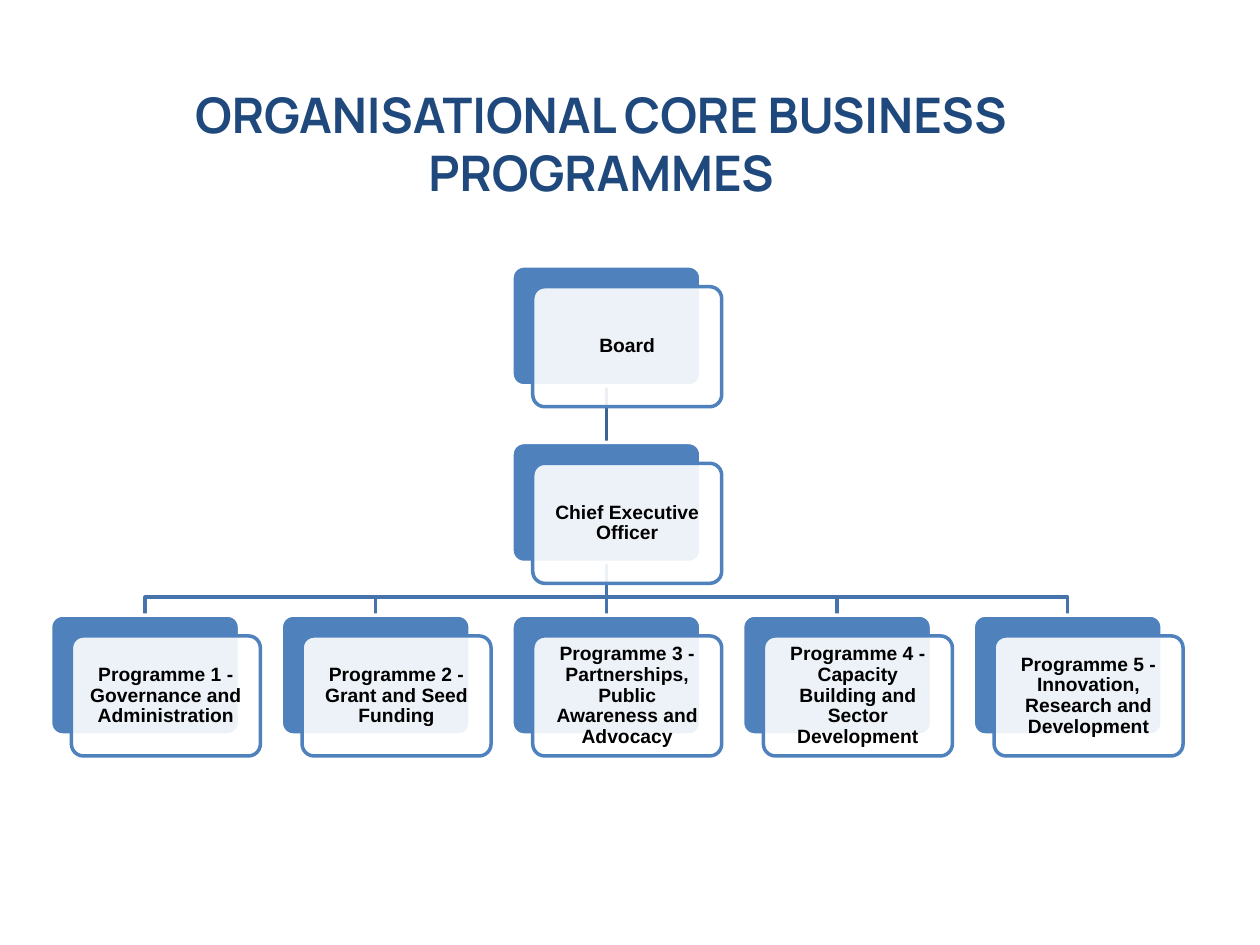
"""Build a slide with an organisation chart of core business programmes."""
from dataclasses import dataclass

from lxml import etree
from pptx import Presentation, util as u
from pptx.dml.color import RGBColor
from pptx.enum import shapes as es, text as et
from pptx.oxml import ns

BLUE, WHITE, BLACK, NAVY = "4F81BD", "FFFFFF", "000000", "1F497D"
WIDE, HIGH, SHIFT = 3.81, 2.42, 0.42
LEFT, STEP, BEND = 1.02, 4.65, 12.04
MID = LEFT + 2 * STEP


@dataclass
class Card:
    """Hold the place and label of one card, in centimetres."""
    label: str
    left: float
    top: float

    @property
    def mid(self) -> float:
        """Return the horizontal centre."""
        return self.left + WIDE / 2

    @property
    def base(self) -> float:
        """Return the lower edge."""
        return self.top + HIGH


def tint(form, code: str) -> None:
    """Give a fill or font colour a solid hex value."""
    form.rgb = RGBColor.from_string(code)


def stroke(shape, code: str) -> None:
    """Set a two-point line."""
    tint(shape.line.color, code)
    shape.line.width = u.Pt(2)


def style(para, size: int, font: str, code: str) -> None:
    """Centre a paragraph and format its runs in bold."""
    para.alignment = et.PP_ALIGN.CENTER
    for run in para.runs:
        run.font.size, run.font.name, run.font.bold = u.Pt(size), font, True
        tint(run.font.color, code)


def panel(slide, left: float, top: float, fill: str, line: str):
    """Draw one rounded rectangle."""
    box = slide.shapes.add_shape(
        es.MSO_SHAPE.ROUNDED_RECTANGLE,
        u.Cm(left), u.Cm(top), u.Cm(WIDE), u.Cm(HIGH))
    box.adjustments[0] = 0.1
    box.shadow.inherit = False
    box.fill.solid()
    tint(box.fill.fore_color, fill)
    stroke(box, line)
    return box


def draw(slide, card: Card):
    """Draw a card as a back panel and a labelled front, and return the back."""
    back = panel(slide, card.left, card.top, BLUE, WHITE)
    front = panel(slide, card.left + SHIFT, card.top + SHIFT, WHITE, BLUE)
    shade = front.fill.fore_color._xFill.find(ns.qn("a:srgbClr"))
    etree.SubElement(shade, ns.qn("a:alpha"), val="90000")
    frame = front.text_frame
    frame.word_wrap = True
    frame.vertical_anchor = et.MSO_ANCHOR.MIDDLE
    frame.margin_left = frame.margin_right = u.Cm(0.2)
    frame.margin_top = frame.margin_bottom = u.Cm(0.2)
    frame.text = card.label
    frame.paragraphs[0].line_spacing = 0.9
    style(frame.paragraphs[0], 11, "Arial", BLACK)
    return back


def lower(shape) -> None:
    """Send a shape behind all others."""
    shape.element.getparent().insert(2, shape.element)


def join(slide, head, foot, code: str) -> None:
    """Join two stacked panels with a straight connector."""
    link = slide.shapes.add_connector(es.MSO_CONNECTOR.STRAIGHT, 0, 0, 0, 0)
    link.begin_connect(head, 2)
    link.end_connect(foot, 0)
    stroke(link, code)
    etree.SubElement(link.element.spPr, ns.qn("a:effectLst"))
    lower(link)


def branch(slide, head: Card, foot: Card, code: str) -> None:
    """Draw a stepped line from one card to another at its side."""
    spots = [(head.mid, head.base), (head.mid, BEND),
             (foot.mid, BEND), (foot.mid, foot.top)]
    first, *rest = [(u.Cm(x), u.Cm(y)) for x, y in spots]
    pen = slide.shapes.build_freeform(*first)
    pen.add_line_segments(rest, close=False)
    line = pen.convert_to_shape()
    line.shadow.inherit = False
    line.fill.background()
    stroke(line, code)
    lower(line)


def title(slide, words: str) -> None:
    """Add the slide title."""
    box = slide.shapes.add_textbox(
        u.Cm(2.31), u.Cm(1.57), u.Cm(19.61), u.Cm(2.64))
    frame = box.text_frame
    frame.word_wrap = True
    frame.auto_size = et.MSO_AUTO_SIZE.SHAPE_TO_FIT_TEXT
    frame.text = words
    style(frame.paragraphs[0], 28, "Manrope", NAVY)


def main() -> None:
    """Build and save the slide."""
    deck = Presentation()
    deck.slide_width, deck.slide_height = u.Cm(25.4), u.Cm(19.05)
    slide = deck.slides.add_slide(deck.slide_layouts[6])
    board = Card("Board", MID, 5.36)
    chief = Card("Chief Executive Officer", MID, 8.92)
    names = ["Governance and Administration",
             "Grant and Seed Funding",
             "Partnerships, Public Awareness and Advocacy",
             "Capacity Building and Sector Development",
             "Innovation, Research and Development"]
    units = [Card(f"Programme {n + 1} - {name}", LEFT + n * STEP, 12.4)
             for n, name in enumerate(names)]
    top, head = draw(slide, board), draw(slide, chief)
    join(slide, top, head, "3B6495")
    for unit in units:
        foot = draw(slide, unit)
        if unit.left == chief.left:
            join(slide, head, foot, "4674AA")
        else:
            branch(slide, chief, unit, "4674AA")
    title(slide, "ORGANISATIONAL CORE BUSINESS PROGRAMMES")
    deck.save("out.pptx")


if __name__ == "__main__":
    main()
